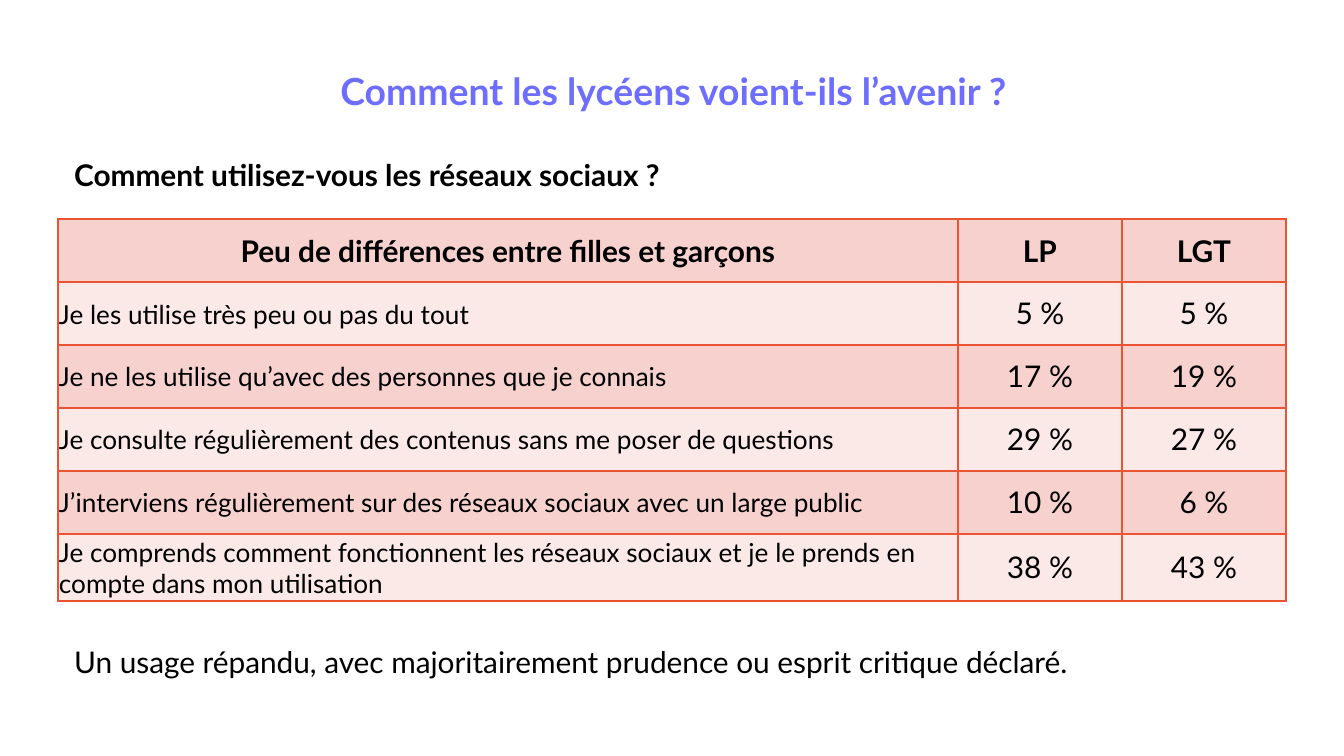
import pptx
import pptx.dml.color
import pptx.enum.text
import pptx.oxml.ns
import pptx.util
from dataclasses import dataclass
from lxml import etree

TITLE = "Comment les lycéens voient-ils l’avenir ?"
QUESTION = "Comment utilisez-vous les réseaux sociaux ?"
CONCLUSION = "Un usage répandu, avec majoritairement prudence ou esprit critique déclaré."
HEADER = ("Peu de différences entre filles et garçons", "LP", "LGT")
ANSWERS = [
    ("Je les utilise très peu ou pas du tout", "5 %", "5 %"),
    ("Je ne les utilise qu’avec des personnes que je connais", "17 %", "19 %"),
    ("Je consulte régulièrement des contenus sans me poser de questions", "29 %", "27 %"),
    ("J’interviens régulièrement sur des réseaux sociaux avec un large public", "10 %", "6 %"),
    ("Je comprends comment fonctionnent les réseaux sociaux et je le prends en compte "
     "dans mon utilisation", "38 %", "43 %"),
]

# Lengths in px
SLIDE_SIZE = (1344, 756)
TITLE_BOX = (58, 50, 1228, 126)
QUESTION_BOX = (58, 124, 1228, 106)
CONCLUSION_BOX = (58, 590, 1248, 144)
TABLE_ORIGIN = (58, 219)
COLUMN_WIDTHS = (900, 164, 164)
ROW_HEIGHTS = (63, 63, 63, 63, 63, 67)
TITLE_BOTTOM_INSET = 46
TEXT_INDENT = 3
LABEL_INSET = 1


@dataclass(frozen=True)
class Theme:
    font: str = "Lato"
    title: str = "6D6DFF"
    text: str = "000000"
    border: str = "EA5433"
    bands: tuple = ("F7D1CE", "FBE9E8")
    title_size: int = 20
    text_size: int = 16
    label_size: int = 14
    border_width: int = 1


THEME = Theme()
ALIGN = pptx.enum.text.PP_ALIGN
MIDDLE = pptx.enum.text.MSO_ANCHOR.MIDDLE


def px(length):
    return pptx.util.Emu(round(length * 914400 / 134.4))


def rgb(color):
    return pptx.dml.color.RGBColor.from_string(color)


def write(text_frame, text, size, color=THEME.text, bold=False, align=ALIGN.LEFT):
    text_frame.text = text
    paragraph = text_frame.paragraphs[0]
    paragraph.alignment = align
    paragraph.font.name = THEME.font
    paragraph.font.size = pptx.util.Pt(size)
    paragraph.font.bold = bold
    paragraph.font.color.rgb = rgb(color)
    return paragraph


def format_frame(text_frame):
    text_frame.word_wrap = True
    text_frame.auto_size = pptx.enum.text.MSO_AUTO_SIZE.NONE
    text_frame.vertical_anchor = MIDDLE


def indent(paragraph):
    properties = paragraph._p.get_or_add_pPr()
    properties.set("marL", str(px(TEXT_INDENT)))
    properties.set("indent", "0")


def add_title(slide):
    title = slide.shapes.title
    title.left, title.top, title.width, title.height = map(px, TITLE_BOX)
    format_frame(title.text_frame)
    title.text_frame.margin_bottom = px(TITLE_BOTTOM_INSET)
    paragraph = write(title.text_frame, TITLE, THEME.title_size, THEME.title, True, ALIGN.CENTER)
    paragraph.line_spacing = 0.9
    indent(paragraph)


def add_text(slide, box, text, bold=False):
    text_frame = slide.shapes.add_textbox(*map(px, box)).text_frame
    format_frame(text_frame)
    paragraph = write(text_frame, text, THEME.text_size, bold=bold)
    indent(paragraph)
    return paragraph


def add_borders(cell):
    properties = cell._tc.get_or_add_tcPr()
    qn = pptx.oxml.ns.qn
    for side in ("lnL", "lnR", "lnT", "lnB"):
        line = etree.SubElement(properties, qn("a:" + side),
                                w=str(pptx.util.Pt(THEME.border_width)))
        fill = etree.SubElement(line, qn("a:solidFill"))
        etree.SubElement(fill, qn("a:srgbClr"), val=THEME.border)


def add_answer_table(slide):
    rows = [HEADER] + ANSWERS
    table = slide.shapes.add_table(
        len(rows), len(HEADER), *map(px, TABLE_ORIGIN),
        px(sum(COLUMN_WIDTHS)), px(sum(ROW_HEIGHTS))).table
    for column, width in zip(table.columns, COLUMN_WIDTHS):
        column.width = px(width)
    for row, height in zip(table.rows, ROW_HEIGHTS):
        row.height = px(height)
    for i, values in enumerate(rows):
        for j, value in enumerate(values):
            cell = table.cell(i, j)
            is_header = i == 0
            is_label = j == 0 and not is_header
            add_borders(cell)
            cell.fill.solid()
            cell.fill.fore_color.rgb = rgb(THEME.bands[i % 2])
            cell.vertical_anchor = MIDDLE
            if is_label:
                cell.margin_left = cell.margin_right = cell.margin_top = px(LABEL_INSET)
                cell.margin_bottom = 0
            write(cell.text_frame, value,
                  THEME.label_size if is_label else THEME.text_size,
                  bold=is_header, align=ALIGN.LEFT if is_label else ALIGN.CENTER)


def main():
    presentation = pptx.Presentation()
    presentation.slide_width, presentation.slide_height = map(px, SLIDE_SIZE)
    title_only = presentation.slide_layouts[5]
    slide = presentation.slides.add_slide(title_only)
    add_title(slide)
    add_text(slide, QUESTION_BOX, QUESTION, bold=True).line_spacing = 0.9
    add_answer_table(slide)
    add_text(slide, CONCLUSION_BOX, CONCLUSION).space_after = pptx.util.Pt(6)
    presentation.save("out.pptx")


if __name__ == "__main__":
    main()
